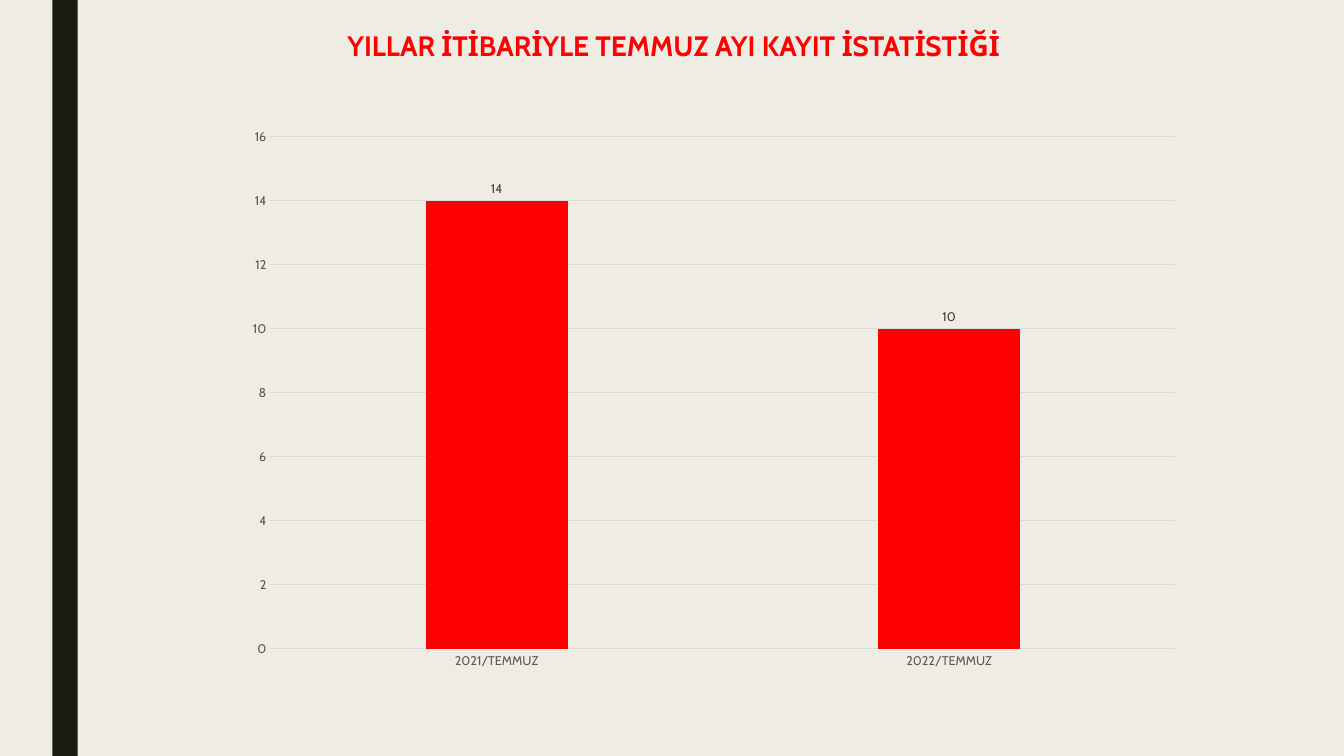
import pptx
import pptx.chart.data
import pptx.dml.color
import pptx.enum.chart
import pptx.enum.shapes
import pptx.enum.text
import pptx.oxml
import pptx.util
from pptx.util import Inches, Pt

COLORS = {
    "background": "EFEDE3",
    "stripe": "191B0E",
    "red": "FF0000",
    "axis_text": "595959",
    "label_text": "404040",
    "grid": "D9D9D9",
}
FONT = "Cabin"


def rgb(name):
    return pptx.dml.color.RGBColor.from_string(COLORS[name])


def style_font(font, size, color, bold=False):
    font.name = FONT
    font.size = Pt(size)
    font.bold = bold
    font.color.rgb = rgb(color)


prs = pptx.Presentation()
prs.slide_width = Inches(13.33)
prs.slide_height = Inches(7.5)
s = prs.slides.add_slide(prs.slide_layouts[6])
s.background.fill.solid()
s.background.fill.fore_color.rgb = rgb("background")

stripe = s.shapes.add_shape(
    pptx.enum.shapes.MSO_SHAPE.RECTANGLE, Inches(0.52), 0, Inches(0.25), Inches(7.5)
)
stripe.shadow.inherit = False
stripe.fill.solid()
stripe.fill.fore_color.rgb = rgb("stripe")
stripe.line.fill.background()

title = s.shapes.add_textbox(Inches(3.23), Inches(0.27), Inches(6.9), Inches(0.55))
tf = title.text_frame
tf.word_wrap = True
tf.vertical_anchor = pptx.enum.text.MSO_ANCHOR.TOP
p = tf.paragraphs[0]
p.text = "YILLAR İTİBARİYLE TEMMUZ AYI KAYIT İSTATİSTİĞİ"
p.alignment = pptx.enum.text.PP_ALIGN.CENTER
p.line_spacing = 0.89
style_font(p.runs[0].font, 20, "red", bold=True)

data = pptx.chart.data.CategoryChartData()
data.categories = ["2021/TEMMUZ", "2022/TEMMUZ"]
data.add_series("Series 1", [14, 10])
chart = s.shapes.add_chart(
    pptx.enum.chart.XL_CHART_TYPE.COLUMN_CLUSTERED,
    Inches(2.3), Inches(1.19), Inches(9.55), Inches(5.58), data,
).chart
chart.has_title = False
chart.has_legend = False
chart.font.name = FONT
chart.font.size = Pt(10)

for axis in (chart.category_axis, chart.value_axis):
    axis.major_tick_mark = pptx.enum.chart.XL_TICK_MARK.NONE
    axis.minor_tick_mark = pptx.enum.chart.XL_TICK_MARK.NONE
    style_font(axis.tick_labels.font, 9, "axis_text")

values = chart.value_axis
values.minimum_scale = 0
values.maximum_scale = 16
values.major_unit = 2
values.has_major_gridlines = True
values.format.line.fill.background()
for line in (chart.category_axis.format.line, values.major_gridlines.format.line):
    line.color.rgb = rgb("grid")
    line.width = Pt(0.75)

plot = chart.plots[0]
plot.gap_width = 219
plot.overlap = -27
plot.vary_by_categories = False
columns = plot.series[0]
columns.format.fill.solid()
columns.format.fill.fore_color.rgb = rgb("red")
labels = columns.data_labels
labels.show_value = True
labels.position = pptx.enum.chart.XL_LABEL_POSITION.OUTSIDE_END
style_font(labels.font, 9, "label_text")

plot_area = chart._chartSpace.chart.plotArea
for layout in plot_area.findall(pptx.oxml.ns.qn("c:layout")):
    plot_area.remove(layout)
plot_area.insert(0, pptx.oxml.parse_xml(
    '<c:layout xmlns:c="http://schemas.openxmlformats.org/drawingml/2006/chart">'
    '<c:manualLayout><c:layoutTarget val="inner"/>'
    '<c:xMode val="edge"/><c:yMode val="edge"/>'
    '<c:x val="0.04"/><c:y val="0.03"/><c:w val="0.94"/><c:h val="0.91"/>'
    '</c:manualLayout></c:layout>'
))

prs.save("out.pptx")
